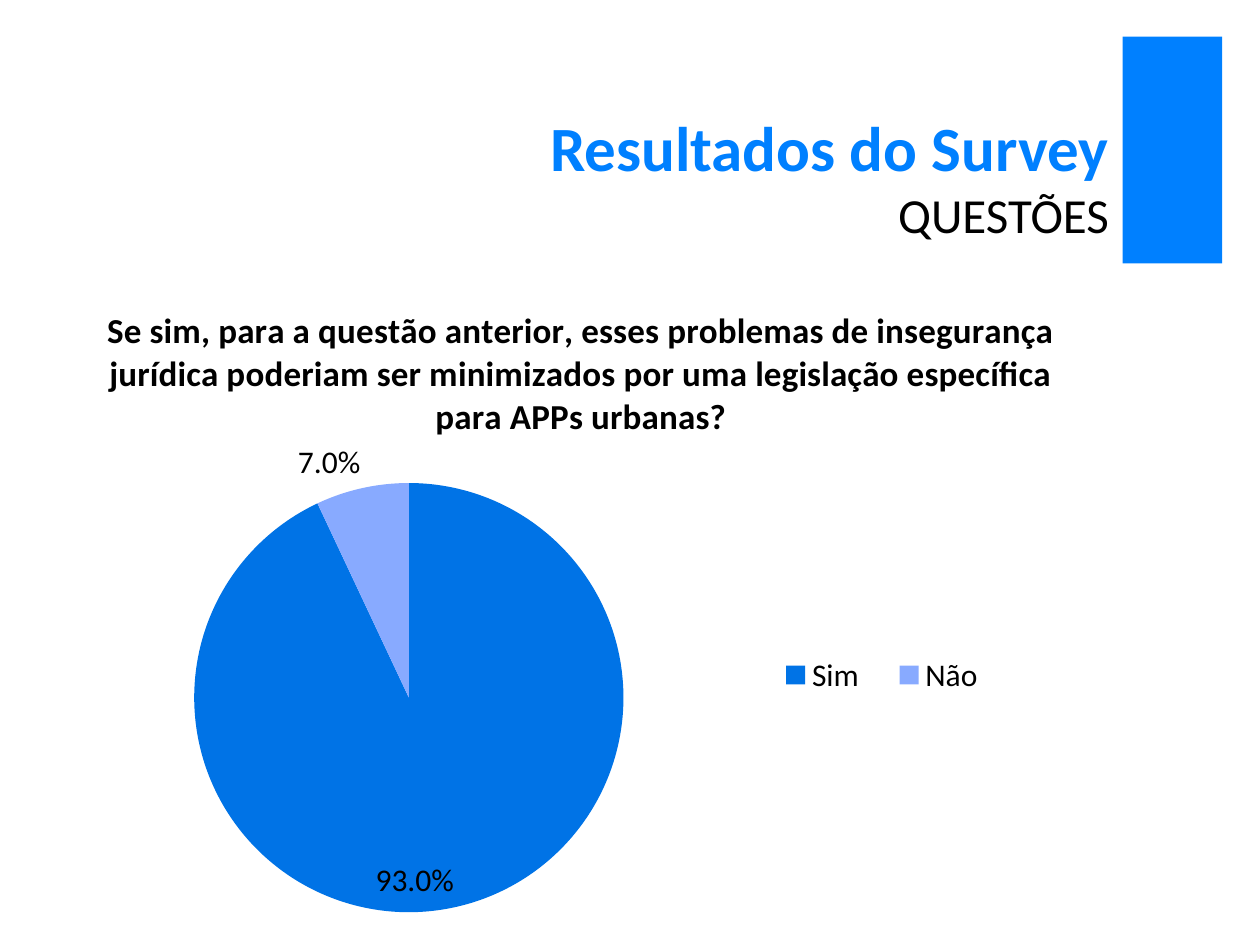
from pptx import Presentation
from pptx.chart.data import CategoryChartData
from pptx.dml.color import RGBColor
from pptx.enum.chart import XL_CHART_TYPE as ChartType
from pptx.enum.chart import XL_LABEL_POSITION as LabelPosition
from pptx.enum.chart import XL_LEGEND_POSITION as LegendPosition
from pptx.enum.shapes import MSO_SHAPE as Shape
from pptx.enum.text import MSO_ANCHOR as Anchor
from pptx.enum.text import MSO_AUTO_SIZE as AutoSize
from pptx.enum.text import PP_ALIGN as Align
from pptx.oxml import parse_xml
from pptx.oxml.ns import nsdecls, qn
from pptx.util import Inches, Pt

COLORS = {
    "accent": "0080FF",
    "yes": "0073E6",
    "no": "88AAFF",
    "text": "000000",
    "white": "FFFFFF",
}
FONT = "Calibri"
QUESTION = (
    "Se sim, para a questão anterior, esses problemas de insegurança jurídica "
    "poderiam ser minimizados por uma legislação específica para APPs urbanas?"
)
ANSWERS = [
    ("Sim", 0.93, "yes", LabelPosition.INSIDE_END),
    ("Não", 0.07, "no", LabelPosition.OUTSIDE_END),
]


def color(name):
    return RGBColor.from_string(COLORS[name])


def fill_solid(fill, name):
    fill.solid()
    fill.fore_color.rgb = color(name)


def format_font(font, size, name="text", bold=False):
    font.name = FONT
    font.size = Pt(size)
    font.bold = bold
    font.color.rgb = color(name)


def add_text(para, text, **style):
    span = para.add_run()
    span.text = text
    format_font(span.font, **style)


def layout_xml(left, top, width=None, height=None, target=None):
    values = {"x": left, "y": top, "w": width, "h": height}
    parts = [f'<c:layoutTarget val="{target}"/>'] if target else []
    parts += [f'<c:{key}Mode val="edge"/>' for key in "xy"]
    parts += [f'<c:{key} val="{value}"/>' for key, value in values.items() if value is not None]
    return parse_xml(
        f'<c:layout {nsdecls("c")}><c:manualLayout>{"".join(parts)}</c:manualLayout></c:layout>'
    )


def set_layout(element, before, *box, target=None):
    for old in element.findall(qn("c:layout")):
        element.remove(old)
    element.insert_element_before(layout_xml(*box, target=target), *before)


def add_accent(page, box):
    block = page.shapes.add_shape(Shape.RECTANGLE, *box)
    block.shadow.inherit = False
    fill_solid(block.fill, "accent")
    block.line.fill.background()


def place_title(page, box):
    title = page.shapes.title
    title.left, title.top, title.width, title.height = box
    fill_solid(title.fill, "white")
    title.line.color.rgb = color("white")
    title.line.width = Pt(0.75)
    frame = title.text_frame
    frame.word_wrap = True
    frame.auto_size = AutoSize.NONE
    frame.vertical_anchor = Anchor.BOTTOM
    para = frame.paragraphs[0]
    para.alignment = Align.RIGHT
    add_text(para, "Resultados do Survey", size=36, name="accent", bold=True)
    para.add_line_break()
    add_text(para, "QUESTÕES", size=28)


def add_pie(page, box):
    data = CategoryChartData(number_format="0.0%")
    data.categories = [answer[0] for answer in ANSWERS]
    data.add_series("Series 1", [answer[1] for answer in ANSWERS])
    chart = page.shapes.add_chart(ChartType.PIE, *box, data).chart
    format_font(chart.font, 18)

    chart.has_title = True
    add_text(chart.chart_title.text_frame.paragraphs[0], QUESTION, size=20, bold=True)
    chart.chart_title.include_in_layout = False

    chart.has_legend = True
    chart.legend.position = LegendPosition.RIGHT
    chart.legend.include_in_layout = False
    format_font(chart.legend.font, 18)

    plot = chart.plots[0]
    plot.vary_by_categories = True
    plot.has_data_labels = True
    labels = plot.data_labels
    labels.show_value = True
    labels.show_percentage = False
    labels.number_format = "0.0%"
    labels.number_format_is_linked = False
    format_font(labels.font, 18)
    for index, (_, _, name, position) in enumerate(ANSWERS):
        point = plot.series[0].points[index]
        fill_solid(point.format.fill, name)
        point.data_label.position = position

    root = chart.element.find(qn("c:chart"))
    area, heading, legend = (root.find(qn(f"c:{tag}")) for tag in ("plotArea", "title", "legend"))
    set_layout(area, ["c:pieChart"], 0.154, 0.307, 0.341, 0.644, target="inner")
    set_layout(heading, ["c:overlay"], 0.08, 0.03)
    set_layout(legend, ["c:overlay", "c:spPr", "c:txPr"], 0.6, 0.48, 0.2, 0.23)


def main():
    deck = Presentation()
    deck.slide_width, deck.slide_height = Inches(10), Inches(7.5)
    page = deck.slides.add_slide(deck.slide_layouts[5])
    add_accent(page, [Inches(n) for n in (8.91, 0.29, 0.79, 1.8)])
    place_title(page, [Inches(n) for n in (0.44, 0.65, 8.46, 1.33)])
    add_pie(page, [Inches(n) for n in (0, 2.21, 10, 5.29)])
    deck.save("out.pptx")


if __name__ == "__main__":
    main()
